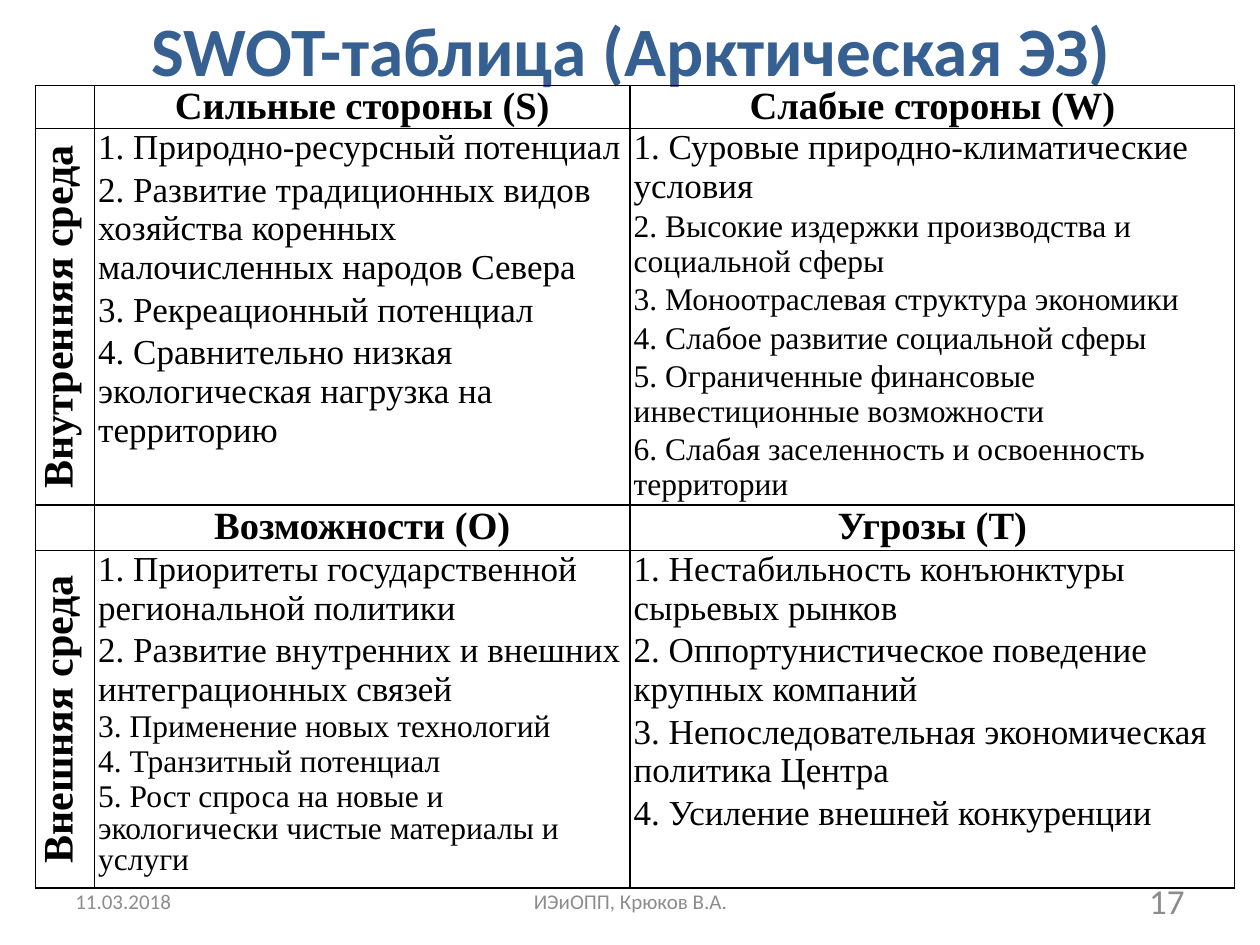
from lxml import etree
from pptx import Presentation
from pptx.dml.color import RGBColor
from pptx.enum import text as t
from pptx.oxml import ns
from pptx.util import Inches, Pt

SERIF, SANS = "Times New Roman", "Calibri"
BLACK, BLUE, GREY = "000000", "376092", "8C8C8C"
LEFT, CENTER, RIGHT = t.PP_ALIGN.LEFT, t.PP_ALIGN.CENTER, t.PP_ALIGN.RIGHT

COLUMNS = [0.47, 4.25, 4.8]
ROWS = [0.34, 2.99, 0.36, 2.68]

# Each entry: (text, size, line spacing)
STRENGTHS = [
    ("1. Природно-ресурсный потенциал", 20, None),
    ("2. Развитие традиционных видов хозяйства коренных малочисленных народов Севера", 20, None),
    ("3. Рекреационный потенциал", 20, None),
    ("4. Сравнительно низкая экологическая нагрузка на территорию", 20, None),
]
WEAKNESSES = [
    ("1. Суровые природно-климатические условия", 20, None),
    ("2. Высокие издержки производства и социальной сферы", 18, None),
    ("3. Моноотраслевая структура экономики", 18, None),
    ("4. Слабое развитие социальной сферы", 18, None),
    ("5. Ограниченные финансовые инвестиционные возможности", 18, None),
    ("6. Слабая заселенность и освоенность территории", 18, None),
]
OPPORTUNITIES = [
    ("1. Приоритеты государственной региональной политики", 20, None),
    ("2. Развитие внутренних и внешних интеграционных связей", 20, None),
    ("3. Применение новых технологий", 18, 0.9),
    ("4. Транзитный потенциал", 18, 0.9),
    ("5. Рост спроса на новые и экологически чистые материалы и услуги", 18, 0.9),
]
THREATS = [
    ("1. Нестабильность конъюнктуры сырьевых рынков", 20, None),
    ("2. Оппортунистическое поведение крупных компаний", 20, None),
    ("3. Непоследовательная экономическая политика Центра", 20, None),
    ("4. Усиление внешней конкуренции", 20, None),
]
HALVES = [
    ("Внутренняя среда", ("Сильные стороны (S)", STRENGTHS), ("Слабые стороны (W)", WEAKNESSES)),
    ("Внешняя среда", ("Возможности (O)", OPPORTUNITIES), ("Угрозы (T)", THREATS)),
]


def color(value):
    """Turn a hex string into a colour."""
    return RGBColor.from_string(value)


def style(paragraph, size, font, ink, bold=False, align=LEFT):
    """Format a paragraph and its runs."""
    paragraph.alignment = align
    for target in [paragraph, *paragraph.runs]:
        target.font.size = Pt(size)
        target.font.name = font
        target.font.bold = bold
        target.font.color.rgb = color(ink)


def add_title(slide, wording):
    """Fill and place the title placeholder."""
    title = slide.shapes.title
    title.left, title.top, title.width, title.height = map(Inches, (0.51, 0, 9, 0.77))
    frame = title.text_frame
    frame.text = wording
    frame.vertical_anchor = t.MSO_ANCHOR.MIDDLE
    style(frame.paragraphs[0], 39.6, SANS, BLUE, True, CENTER)


def add_footer(slide, wording, left, width, size, align):
    """Add one text of the footer line."""
    box = slide.shapes.add_textbox(Inches(left), Inches(6.95), Inches(width), Inches(0.4))
    frame = box.text_frame
    frame.word_wrap = True
    frame.vertical_anchor = t.MSO_ANCHOR.MIDDLE
    frame.text = wording
    style(frame.paragraphs[0], size, SANS, GREY, align=align)


def prepare_cell(cell):
    """Give a cell thin black borders, narrow margins and no fill."""
    cell.margin_left = cell.margin_right = Inches(0.03)
    cell.margin_top = cell.margin_bottom = 0
    properties = cell._tc.get_or_add_tcPr()
    for side in ("a:lnL", "a:lnR", "a:lnT", "a:lnB"):
        line = etree.SubElement(properties, ns.qn(side), w=str(Pt(1)))
        fill = etree.SubElement(line, ns.qn("a:solidFill"))
        etree.SubElement(fill, ns.qn("a:srgbClr"), val=BLACK)
    cell.fill.background()
    style(cell.text_frame.paragraphs[0], 12, SERIF, BLACK)


def fill_cell(cell, entries, bold=False, align=LEFT):
    """Write the entries into a cell, one paragraph each."""
    frame = cell.text_frame
    frame.text = "\n".join(wording for wording, _, _ in entries)
    for paragraph, (_, size, spacing) in zip(frame.paragraphs, entries):
        style(paragraph, size, SERIF, BLACK, bold, align)
        paragraph.space_before = paragraph.space_after = Pt(1)
        if spacing:
            paragraph.line_spacing = spacing


def fill_side_label(cell, wording):
    """Write a label that reads upwards."""
    fill_cell(cell, [(wording, 24, None)], True, CENTER)
    cell.vertical_anchor = t.MSO_ANCHOR.MIDDLE
    cell._tc.get_or_add_tcPr().set("vert", "vert270")


def add_swot_table(slide):
    """Build the SWOT grid from its two halves."""
    frame = slide.shapes.add_table(
        len(ROWS), len(COLUMNS), Inches(0.28), Inches(0.68),
        Inches(sum(COLUMNS)), Inches(sum(ROWS)))
    table = frame.table
    table.first_row = table.horz_banding = False
    for column, width in zip(table.columns, COLUMNS):
        column.width = Inches(width)
    for row, height in zip(table.rows, ROWS):
        row.height = Inches(height)
    for cell in table.iter_cells():
        prepare_cell(cell)
    for half, (environment, *quadrants) in enumerate(HALVES):
        top = 2 * half
        fill_side_label(table.cell(top + 1, 0), environment)
        for column, (heading, entries) in enumerate(quadrants, 1):
            fill_cell(table.cell(top, column), [(heading, 22, None)], True, CENTER)
            fill_cell(table.cell(top + 1, column), entries)


def main():
    """Build and save the slide."""
    deck = Presentation()
    deck.slide_width, deck.slide_height = Inches(10), Inches(7.5)
    slide = deck.slides.add_slide(deck.slide_layouts[5])
    add_title(slide, "SWOT-таблица (Арктическая ЭЗ)")
    add_swot_table(slide)
    add_footer(slide, "17", 7.17, 2.33, 20, RIGHT)
    add_footer(slide, "11.03.2018", 0.5, 2.33, 12, LEFT)
    add_footer(slide, "ИЭиОПП, Крюков В.А.", 3.42, 3.17, 12, CENTER)
    deck.save("out.pptx")


if __name__ == "__main__":
    main()
